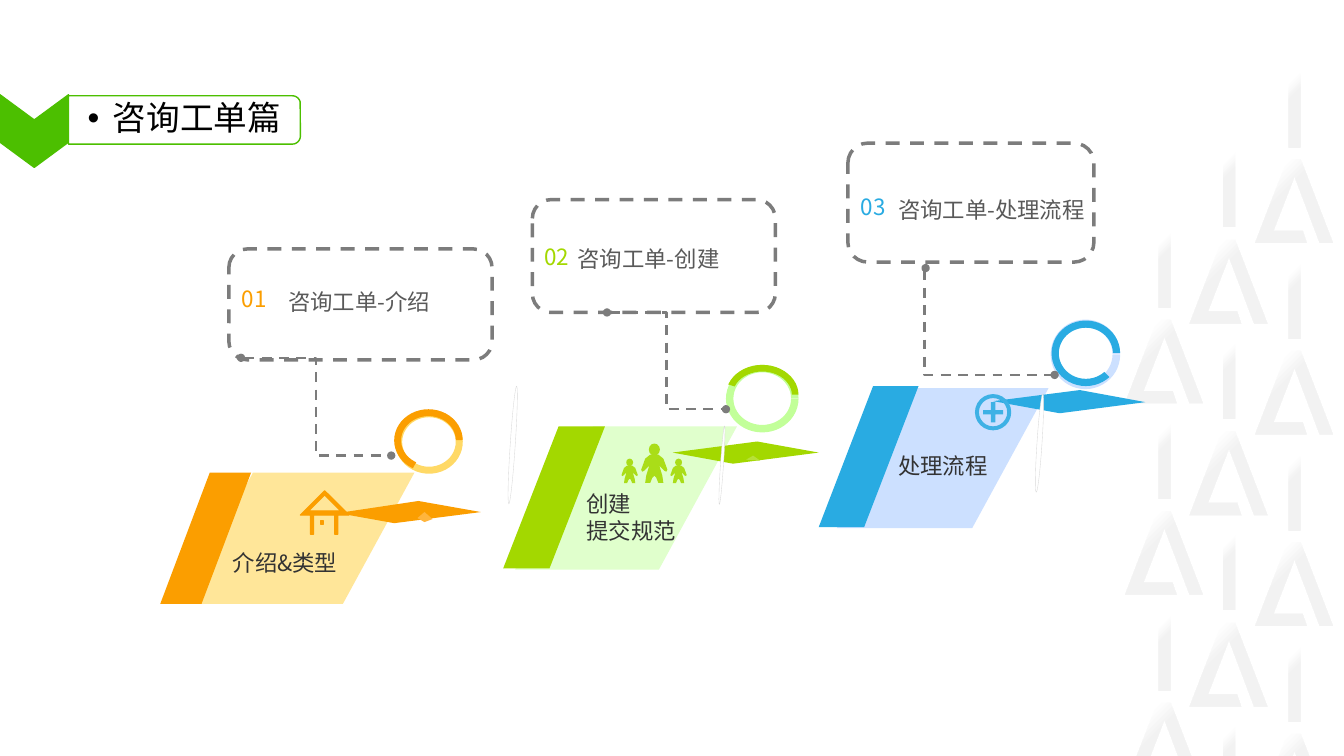
from dataclasses import dataclass
from math import cos, radians, sin

from lxml.etree import SubElement
from pptx import Presentation
from pptx.dml.color import RGBColor
from pptx.enum.dml import MSO_LINE
from pptx.enum.shapes import MSO_CONNECTOR, MSO_SHAPE as Preset
from pptx.enum.text import MSO_ANCHOR, PP_ALIGN
from pptx.oxml.ns import qn
from pptx.util import Emu, Pt

Point = tuple[float, float]
Frame = tuple[int, int, int, int]

PX = 9144
FONT = "Noto Sans CJK SC"
COLORS = {
    "white": "FFFFFF", "motif": "F2F2F2", "brand": "4CBF00", "gray": "7C7C7C",
    "sheen": "D9D9D9", "black": "000000", "caption": "333333", "heading": "595959",
    "orange": "FB9E00", "orange_light": "FFE699", "orange_ring": "FFD966",
    "orange_glint": "FFB53D", "green": "A3D800", "green_light": "E0FFCC",
    "green_ring": "C2FF99", "green_glint": "B7E038", "people": "AADD18",
    "blue": "29ABE2", "blue_light": "CCE0FF", "plus": "3DB1E5",
}


@dataclass
class Topic:
    color: str
    light: str
    ring: str
    number: str
    heading: str
    caption: list[str]
    card: Frame
    number_frame: Frame
    heading_frame: Frame
    caption_frame: Frame
    panel: Frame
    strip: Frame
    ring_frame: Frame
    arc_frame: Frame
    arc_start: float
    diamond: list[Point]
    sheen: Frame
    link: Frame
    bend: int


@dataclass
class Column:
    left: int
    bar_tops: range
    letter_tops: range


TOPICS = [
    Topic("orange", "orange_light", "orange_ring", "01", "咨询工单-介绍", ["介绍&类型"],
          (227, 247, 261, 110), (230, 259, 56, 74), (276, 264, 224, 66),
          (221, 535, 140, 46), (180, 469, 231, 130), (159, 469, 90, 130),
          (392, 407, 67, 63), (391, 406, 68, 62), 71.6,
          [(335, 509), (415, 497), (477, 508), (391, 519)],
          (450, 439, 117, 5), (239, 355, 388, 452), 50000),
    Topic("green", "green_light", "green_ring", "02", "咨询工单-创建", ["创建", "提交规范"],
          (528, 198, 241, 112), (530, 230, 50, 49), (563, 224, 218, 59),
          (572, 500, 160, 25), (511, 423, 220, 142), (499, 423, 101, 141),
          (720, 362, 72, 67), (720, 362, 72, 60), 118.46,
          [(667, 449), (751, 438), (812, 449), (727, 460)],
          (677, 460, 78, 3), (602, 310, 720, 406), 50000),
    Topic("blue", "blue_light", "blue_light", "03", "咨询工单-处理流程", ["处理流程"],
          (841, 142, 244, 118), (844, 169, 73, 72), (881, 157, 227, 97),
          (881, 443, 121, 38), (830, 385, 210, 139), (812, 383, 99, 140),
          (1042, 317, 69, 69), (1043, 318, 68, 65), 27.19,
          [(985, 398), (1071, 387), (1136, 399), (1051, 410)],
          (982, 437, 98, 5), (918, 266, 1046, 372), -800),
]
COLUMNS = [
    Column(1116, range(222, 750, 190), range(317, 750, 190)),
    Column(1180, range(142, 750, 190), range(238, 750, 190)),
    Column(1245, range(63, 750, 190), range(158, 750, 190)),
]
LETTER = [(45, 0), (32, 0), (0, 83), (51, 83), (47, 71), (18, 71), (39, 17), (64, 83), (77, 83)]
HALF_BODY = [(4, 11), (9, 15), (13, 26), (12, 28), (10, 27), (5, 22), (8, 32), (9, 39), (4, 39),
             (2, 34)]
BODY = HALF_BODY + [(0, 32)] + [(-x, y) for x, y in reversed(HALF_BODY)]
HOUSE = [
    [(321, 517), (318, 517), (318, 520), (321, 520)],
    [(306, 507), (322, 491), (338, 507)],
    [(322, 487), (298, 511), (308, 511), (308, 530), (311, 530), (311, 511), (332, 511),
     (332, 530), (335, 530), (335, 511), (346, 511)],
]
CHEVRON = [(68, 94), (68, 141), (34, 166), (0, 141), (0, 94), (34, 119)]
GLINTS = {
    "orange_glint": [(414, 514), (421, 508), (429, 515), (421, 518)],
    "green_glint": [(740, 456), (747, 452), (754, 457)],
}


def px(length: float) -> Emu:
    return Emu(round(length * PX))


def rgb(name: str) -> RGBColor:
    return RGBColor.from_string(COLORS[name])


def paint(shape, fill: str | None = None, line: str | None = None, width: float = 1) -> None:
    shape.shadow.inherit = False
    if fill:
        shape.fill.solid()
        shape.fill.fore_color.rgb = rgb(fill)
    else:
        shape.fill.background()
    if line:
        shape.line.color.rgb = rgb(line)
        shape.line.width = Pt(width)
    else:
        shape.line.fill.background()


def preset(slide, kind: Preset, frame: tuple, adjust: tuple = (), **style):
    shape = slide.shapes.add_shape(kind, *map(px, frame))
    for index, value in enumerate(adjust):
        shape.adjustments[index] = value
    paint(shape, **style)
    return shape


def outline(slide, *contours: list[Point], **style):
    builder = None
    for contour in contours:
        first, *rest = [(px(x), px(y)) for x, y in contour]
        if builder is None:
            builder = slide.shapes.build_freeform(*first, scale=1.0)
        else:
            builder.move_to(*first)
        builder.add_line_segments(rest, close=True)
    shape = builder.convert_to_shape()
    paint(shape, **style)
    return shape


def write(box, *lines: str, color: str, size: int = 16, spacing: float = 1,
          wrap: bool = True, bullet: bool = False) -> None:
    frame = box.text_frame
    frame.word_wrap = wrap
    frame.vertical_anchor = MSO_ANCHOR.MIDDLE
    for index, line in enumerate(lines):
        para = frame.add_paragraph() if index else frame.paragraphs[0]
        para.alignment = PP_ALIGN.LEFT
        para.line_spacing = spacing
        if bullet:
            props = para._p.get_or_add_pPr()
            props.set("marL", str(px(25)))
            props.set("indent", str(px(-25)))
            SubElement(props, qn("a:buFont")).set("typeface", "Arial")
            SubElement(props, qn("a:buChar")).set("char", "•")
        span = para.add_run()
        span.text = line
        span.font.size = Pt(size)
        span.font.name = FONT
        span.font.color.rgb = rgb(color)
        SubElement(span._r.get_or_add_rPr(), qn("a:ea")).set("typeface", FONT)


def label(slide, frame: Frame, *lines: str, **style) -> None:
    write(slide.shapes.add_textbox(*map(px, frame)), *lines, **style)


def fade(shape) -> None:
    shape.fill.gradient()
    shape.fill.gradient_angle = 315
    for stop, position, color in zip(shape.fill.gradient_stops, (0.2, 0.4), ("white", "motif")):
        stop.position = position
        stop.color.rgb = rgb(color)


def draw_motif(slide, column: Column) -> None:
    for top in column.bar_tops:
        fade(preset(slide, Preset.RECTANGLE, (column.left + 33, top, 12, 83)))
    for top in column.letter_tops:
        fade(outline(slide, [(column.left + x, top + y) for x, y in LETTER]))


def draw_link(slide, ends: Frame, bend: int) -> None:
    link = slide.shapes.add_connector(MSO_CONNECTOR.ELBOW, *map(px, ends))
    link.line.color.rgb = rgb("gray")
    link.line.width = Pt(1.75)
    link.line.dash_style = MSO_LINE.DASH
    props = link._element.spPr
    guide = SubElement(props.find(qn("a:prstGeom")).find(qn("a:avLst")), qn("a:gd"))
    guide.set("name", "adj1")
    guide.set("fmla", f"val {bend}")
    for end in ("a:headEnd", "a:tailEnd"):
        SubElement(props.find(qn("a:ln")), qn(end)).set("type", "oval")
    SubElement(props, qn("a:effectLst"))


def draw_topic(slide, topic: Topic) -> None:
    preset(slide, Preset.BLOCK_ARC, topic.ring_frame, (0, 215.55, 0.11), fill=topic.ring)
    card = preset(slide, Preset.ROUNDED_RECTANGLE, topic.card, line="gray", width=2.5)
    card.line.dash_style = MSO_LINE.DASH
    preset(slide, Preset.PARALLELOGRAM, topic.panel, (0.545,), fill=topic.light)
    preset(slide, Preset.PARALLELOGRAM, topic.strip, (0.545,), fill=topic.color)
    outline(slide, topic.diamond, fill=topic.color)
    preset(slide, Preset.BLOCK_ARC, topic.arc_frame, (topic.arc_start, 215.55, 0.11),
           fill=topic.color)
    sheen = preset(slide, Preset.OVAL, topic.sheen, fill="white", line="sheen", width=0.25)
    sheen.rotation = 93.8
    label(slide, topic.caption_frame, *topic.caption, color="caption")
    label(slide, topic.number_frame, topic.number, color=topic.color, wrap=False)
    label(slide, topic.heading_frame, topic.heading, color="heading", spacing=1.2)
    draw_link(slide, topic.link, topic.bend)


def draw_person(slide, center: float, top: int, scale: float) -> None:
    preset(slide, Preset.OVAL, (center - 5.5 * scale, top, 11 * scale, 12 * scale), fill="people")
    outline(slide, [(center + x * scale, top + y * scale) for x, y in BODY], fill="people")


def draw_icons(slide) -> None:
    outline(slide, *HOUSE, fill="orange", line="orange")
    for center, top, scale in ((624.5, 455, 0.62), (649, 440, 1), (673, 455, 0.62)):
        draw_person(slide, center, top, scale)
    preset(slide, Preset.DONUT, (967, 391, 36, 36), (0.11,), fill="plus")
    preset(slide, Preset.CROSS, (975, 399, 20, 20), (0.39,), fill="plus")
    for color, points in GLINTS.items():
        outline(slide, points, fill=color)


def draw_title(slide) -> None:
    outline(slide, CHEVRON, fill="brand", line="brand")
    turns = [radians(angle) for angle in range(-90, 91, 15)]
    corners = [(290 + 8 * cos(turn), (103 if turn < 0 else 135) + 8 * sin(turn)) for turn in turns]
    tag = outline(slide, [(68, 95), *corners, (68, 143)], fill="white", line="brand")
    frame = tag.text_frame
    frame.margin_left = px(19)
    frame.margin_right = frame.margin_top = frame.margin_bottom = px(6)
    write(tag, "咨询工单篇", color="black", size=24, spacing=0.9, bullet=True)


def main() -> None:
    deck = Presentation()
    deck.slide_width, deck.slide_height = px(1333), px(750)
    page = deck.slides.add_slide(deck.slide_layouts[6])
    for column in COLUMNS:
        draw_motif(page, column)
    for topic in TOPICS:
        draw_topic(page, topic)
    draw_icons(page)
    draw_title(page)
    deck.save("out.pptx")


if __name__ == "__main__":
    main()
